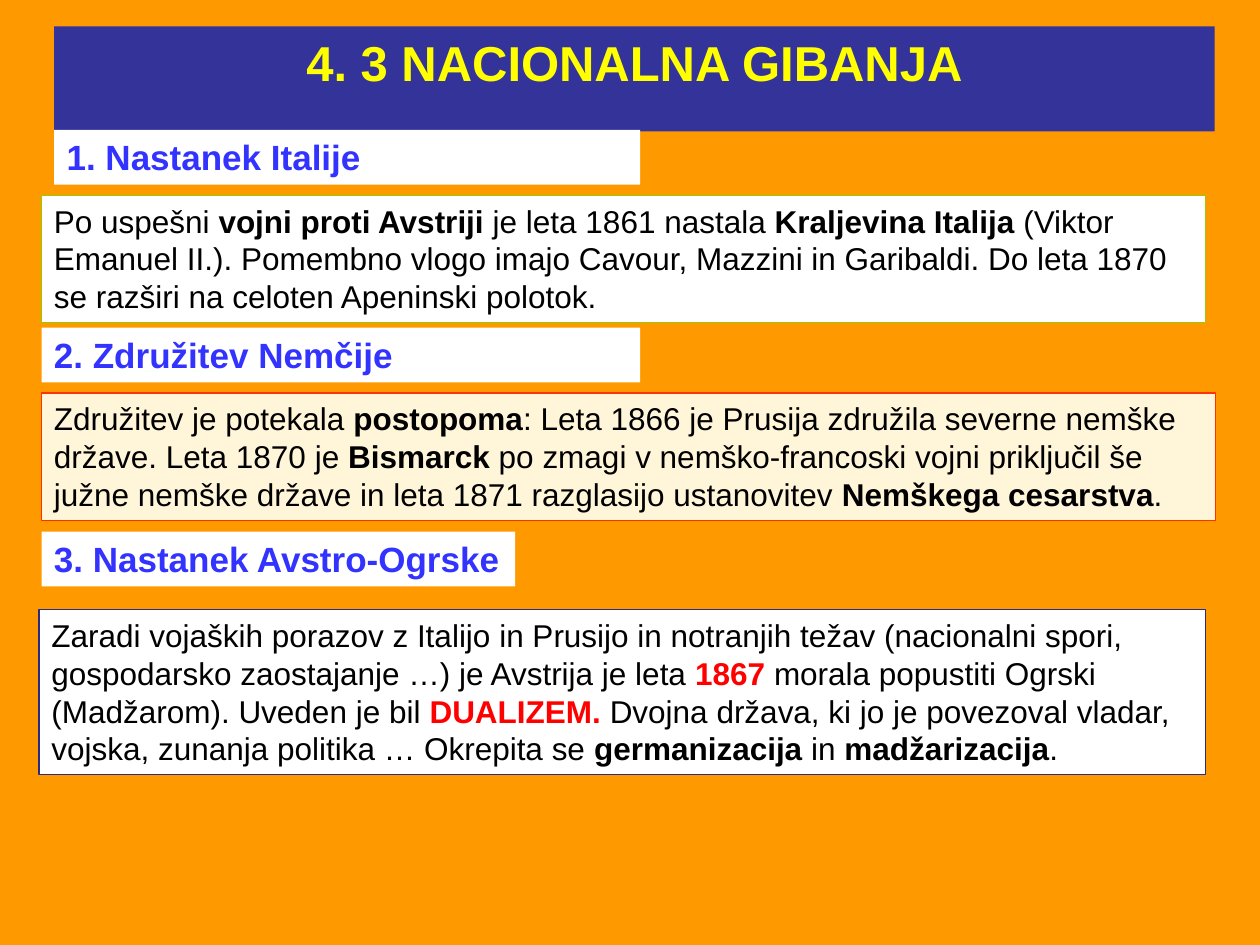
from typing import NamedTuple, Optional

from pptx import Presentation
from pptx.dml.color import RGBColor
from pptx.enum.text import MSO_ANCHOR, MSO_AUTO_SIZE, PP_ALIGN
from pptx.util import Inches, Pt

ORANGE = RGBColor(0xFF, 0x99, 0x00)
WHITE = RGBColor(0xFF, 0xFF, 0xFF)
CREAM = RGBColor(0xFF, 0xF5, 0xD9)
BLACK = RGBColor(0x00, 0x00, 0x00)
INDIGO = RGBColor(0x33, 0x33, 0x99)
NAVY = RGBColor(0x2A, 0x2A, 0x7E)
BLUE = RGBColor(0x33, 0x33, 0xFF)
YELLOW = RGBColor(0xFF, 0xFF, 0x00)
GREEN = RGBColor(0x99, 0xCC, 0x00)
SCARLET = RGBColor(0xFF, 0x33, 0x00)
RED = RGBColor(0xFF, 0x00, 0x00)

PLAIN = dict(name="Arial", size=Pt(18), bold=False, color=BLACK)
BOLD = {**PLAIN, "bold": True}
ALERT = {**BOLD, "color": RED}
HEADING = {**BOLD, "size": Pt(20), "color": BLUE}
TITLE = {**BOLD, "size": Pt(28), "color": YELLOW}


class Run(NamedTuple):
    text: str
    style: dict = PLAIN


class Area(NamedTuple):
    """Left, top, width and height in percent of the slide."""
    x: float
    y: float
    w: float
    h: float


class Panel(NamedTuple):
    area: Area
    runs: list[Run]
    fill: RGBColor = WHITE
    line: Optional[RGBColor] = None
    wrap: bool = True


TITLE_PANEL = Panel(Area(4.3, 2.8, 92.1, 7.6),
                    [Run("4. 3 NACIONALNA GIBANJA", TITLE)], INDIGO)

PANELS = [
    Panel(Area(4.3, 13.73, 46.5, 5.8), [Run("1. Nastanek Italije", HEADING)]),
    Panel(Area(3.3, 20.67, 92.4, 13.47), [
        Run("Po uspešni"),
        Run(" vojni proti Avstriji ", BOLD),
        Run("je leta 1861 nastala "),
        Run("Kraljevina Italija ", BOLD),
        Run("(Viktor Emanuel II.). Pomembno vlogo imajo Cavour, Mazzini in "
            "Garibaldi. Do leta 1870 se razširi na celoten Apeninski polotok."),
    ], line=GREEN),
    Panel(Area(3.3, 34.67, 47.5, 5.8), [Run("2. Združitev Nemčije", HEADING)]),
    Panel(Area(3.3, 41.6, 93.2, 13.47), [
        Run("Združitev je potekala "),
        Run("postopoma", BOLD),
        Run(": Leta 1866 je Prusija združila severne nemške države. Leta 1870 je "),
        Run("Bismarck", BOLD),
        Run(" po zmagi v nemško-francoski vojni priključil še južne nemške "
            "države in leta 1871 razglasijo ustanovitev "),
        Run("Nemškega cesarstva", BOLD),
        Run("."),
    ], CREAM, SCARLET),
    Panel(Area(3.3, 56.27, 37.6, 5.8),
          [Run("3. Nastanek Avstro-Ogrske", HEADING)], wrap=False),
    Panel(Area(3.1, 64.53, 92.6, 17.47), [
        Run("Zaradi vojaških porazov z Italijo in Prusijo in notranjih težav "
            "(nacionalni spori, gospodarsko zaostajanje …) je Avstrija je leta "),
        Run("1867 ", ALERT),
        Run("morala popustiti Ogrski (Madžarom). Uveden je bil "),
        Run("DUALIZEM. ", ALERT),
        Run("Dvojna država, ki jo je povezoval vladar, vojska, zunanja "
            "politika … Okrepita se "),
        Run("germanizacija", BOLD),
        Run(" in "),
        Run("madžarizacija", BOLD),
        Run("."),
    ], line=NAVY),
]


def add_runs(p, runs: list[Run]) -> None:
    for text, style in runs:
        r = p.add_run()
        r.text = text
        for key, value in style.items():
            if key == "color":
                r.font.color.rgb = value
            else:
                setattr(r.font, key, value)


def format_panel(sp, panel: Panel, prs, align=PP_ALIGN.LEFT) -> None:
    """Place, colour and fill a text box or placeholder."""
    x, y, w, h = panel.area
    sp.left, sp.width = (int(prs.slide_width * v / 100) for v in (x, w))
    sp.top, sp.height = (int(prs.slide_height * v / 100) for v in (y, h))
    sp.fill.solid()
    sp.fill.fore_color.rgb = panel.fill
    if panel.line is not None:
        sp.line.color.rgb = panel.line
        sp.line.width = Pt(0.75)
    tf = sp.text_frame
    frame = dict(word_wrap=panel.wrap, vertical_anchor=MSO_ANCHOR.TOP,
                 auto_size=MSO_AUTO_SIZE.SHAPE_TO_FIT_TEXT)
    for key, value in frame.items():
        setattr(tf, key, value)
    p = tf.paragraphs[0]
    p.alignment = align
    add_runs(p, panel.runs)


def main() -> None:
    prs = Presentation()
    prs.slide_width, prs.slide_height = Inches(10), Inches(7.5)
    s = prs.slides.add_slide(prs.slide_layouts[5])
    s.background.fill.solid()
    s.background.fill.fore_color.rgb = ORANGE
    format_panel(s.shapes.title, TITLE_PANEL, prs, PP_ALIGN.CENTER)
    for panel in PANELS:
        format_panel(s.shapes.add_textbox(0, 0, 0, 0), panel, prs)
    prs.save("out.pptx")


if __name__ == "__main__":
    main()
